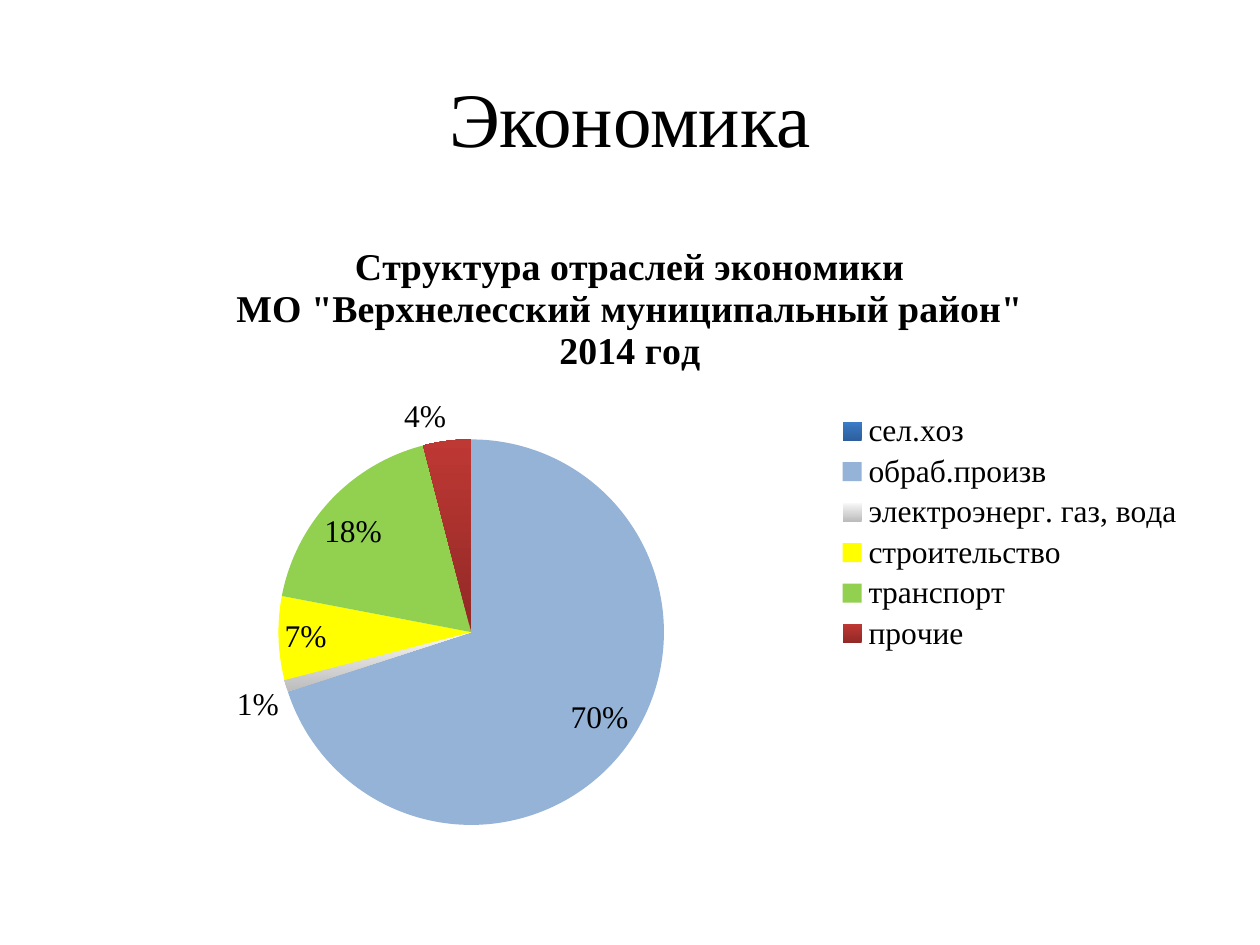
from dataclasses import dataclass

from lxml.etree import SubElement
from pptx import Presentation
from pptx.chart.data import CategoryChartData
from pptx.dml.color import RGBColor
from pptx.enum.chart import XL_CHART_TYPE, XL_LABEL_POSITION, XL_LEGEND_POSITION
from pptx.enum.text import MSO_ANCHOR, PP_ALIGN
from pptx.oxml.ns import qn
from pptx.util import Cm, Pt


@dataclass(frozen=True)
class Theme:
    font: str = "Times New Roman"
    text: str = "000000"
    heading_size: float = 44
    chart_title_size: float = 21.6
    chart_size: float = 18
    sector_fills: tuple = (
        ("2D5F9E", "3C7BC7"),
        ("95B3D7",),
        ("BCBCBC", "F8F8F8"),
        ("FFFF00",),
        ("92D050",),
        ("912926", "BE3834"),
    )


THEME = Theme()
CHART_TITLE = (
    "Структура отраслей экономики",
    'МО "Верхнелесский муниципальный район"',
    "2014 год",
)
SECTORS = {
    "сел.хоз": 0,
    "обраб.произв": 70,
    "электроэнерг. газ, вода": 1,
    "строительство": 7,
    "транспорт": 18,
    "прочие": 4,
}


def style_font(font, size, bold=False):
    font.name = THEME.font
    font.size = Pt(size)
    font.bold = bold
    font.color.rgb = RGBColor.from_string(THEME.text)


def add_heading(page, text):
    box = page.shapes.add_textbox(Cm(1.27), Cm(0.76), Cm(22.86), Cm(3.18))
    frame = box.text_frame
    frame.word_wrap = True
    frame.vertical_anchor = MSO_ANCHOR.MIDDLE
    para = frame.paragraphs[0]
    para.alignment = PP_ALIGN.CENTER
    span = para.add_run()
    span.text = text
    style_font(span.font, THEME.heading_size)


def place_part(part, index, target, **fractions):
    for old in part.findall(qn("c:layout")):
        part.remove(old)
    layout = SubElement(part, qn("c:layout"))
    manual = SubElement(layout, qn("c:manualLayout"))
    if target:
        SubElement(manual, qn("c:layoutTarget")).set("val", target)
    for mode in ("xMode", "yMode"):
        SubElement(manual, qn(f"c:{mode}")).set("val", "edge")
    for name, value in fractions.items():
        SubElement(manual, qn(f"c:{name}")).set("val", str(value))
    part.insert(index, layout)


def add_chart_title(chart, lines):
    frame = chart.chart_title.text_frame
    for number, line in enumerate(lines):
        para = frame.add_paragraph() if number else frame.paragraphs[0]
        span = para.add_run()
        span.text = line
        style_font(span.font, THEME.chart_title_size, bold=True)
    chart.chart_title.include_in_layout = False


def fill_slice(fill, colors):
    if len(colors) == 1:
        fill.solid()
        fill.fore_color.rgb = RGBColor.from_string(colors[0])
        return
    fill.gradient()
    fill.gradient_angle = 90
    for stop, color in zip(fill.gradient_stops, colors):
        stop.color.rgb = RGBColor.from_string(color)


def add_legend(chart):
    chart.has_legend = True
    legend = chart.legend
    legend.position = XL_LEGEND_POSITION.RIGHT
    legend.include_in_layout = False
    style_font(legend.font, THEME.chart_size)
    place_part(legend._element, 1, None, x=0.68, y=0.3, w=0.31, h=0.4)


def add_percent_labels(plot):
    plot.has_data_labels = True
    labels = plot.data_labels
    labels.show_percentage = True
    labels.show_value = False
    labels.number_format = "0%"
    labels.number_format_is_linked = False
    labels.position = XL_LABEL_POSITION.BEST_FIT
    style_font(labels.font, THEME.chart_size)


def add_sector_pie(page):
    data = CategoryChartData()
    data.categories = list(SECTORS)
    data.add_series("Series 1", list(SECTORS.values()))
    chart = page.shapes.add_chart(
        XL_CHART_TYPE.PIE, Cm(1.27), Cm(4.45), Cm(22.86), Cm(12.57), data
    ).chart
    style_font(chart.font, THEME.chart_size)
    add_chart_title(chart, CHART_TITLE)
    add_legend(chart)
    plot = chart.plots[0]
    plot.vary_by_categories = True
    add_percent_labels(plot)
    for index, colors in enumerate(THEME.sector_fills):
        fill_slice(plot.series[0].points[index].format.fill, colors)
    plot_area = chart._chartSpace.chart.plotArea
    place_part(plot_area, 0, "inner", x=0.19, y=0.34, w=0.34, h=0.64)


def main():
    deck = Presentation()
    deck.slide_width, deck.slide_height = Cm(25.4), Cm(19.05)
    page = deck.slides.add_slide(deck.slide_layouts[6])
    add_heading(page, "Экономика")
    add_sector_pie(page)
    deck.save("out.pptx")


if __name__ == "__main__":
    main()
